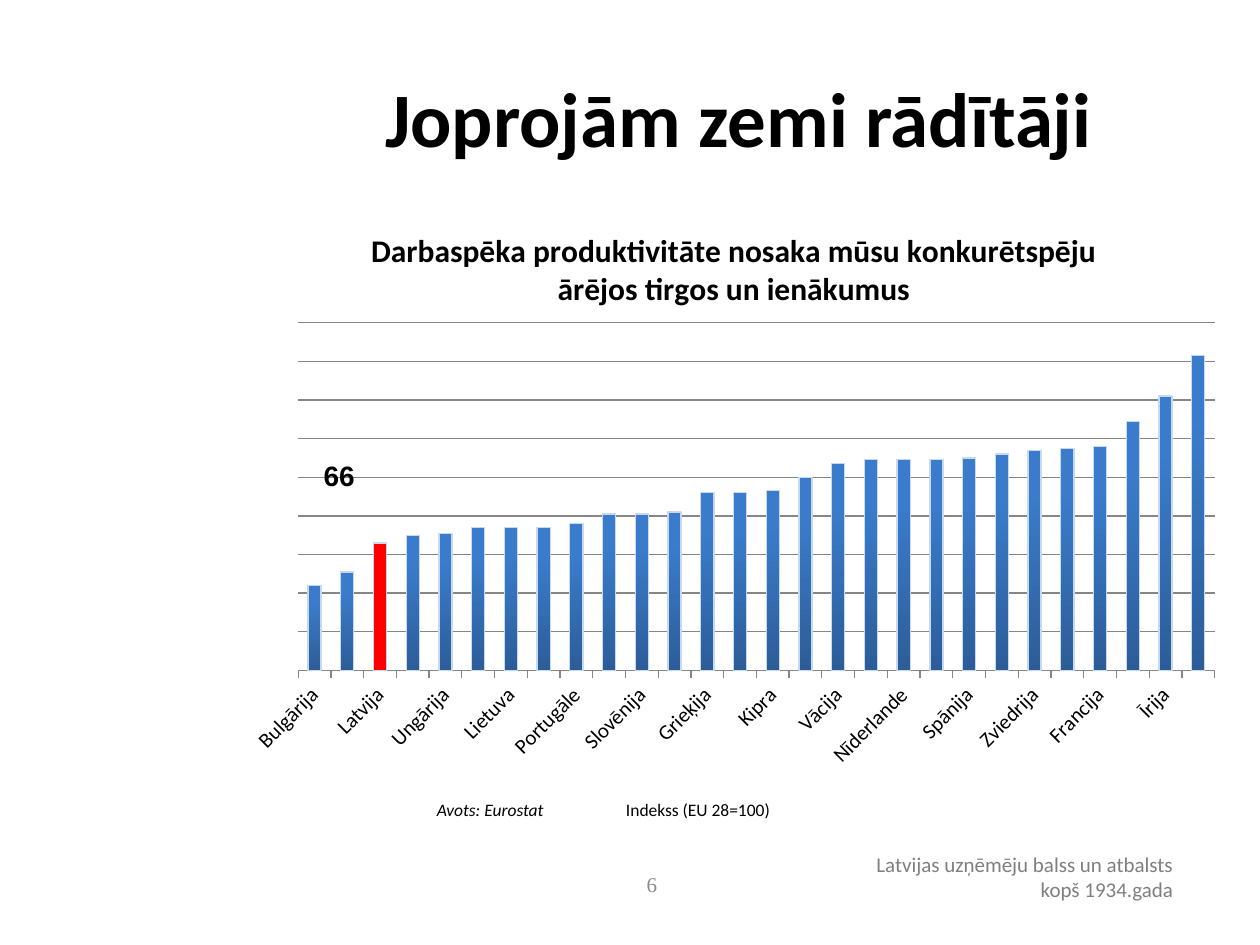
from dataclasses import dataclass

import pptx
import pptx.chart.data
import pptx.dml.color
import pptx.enum.chart
import pptx.enum.text
import pptx.oxml
import pptx.oxml.ns
import pptx.util
from pptx.util import Inches

ALIGN = pptx.enum.text.PP_ALIGN
ANCHOR = pptx.enum.text.MSO_ANCHOR


@dataclass(frozen=True)
class Theme:
    font: str = "Calibri"
    number_font: str = "Times New Roman"
    label_font: str = "Arial"
    ink: str = "000000"
    paper: str = "FFFFFF"
    footer: str = "7F7F7F"
    page_number: str = "898989"
    grid: str = "868686"
    bar_top: str = "3A7CCB"
    bar_bottom: str = "2C5D98"
    bar_edge: str = "C6D9F1"
    highlight: str = "FF0000"
    title_size: int = 44
    chart_title_size: int = 18
    label_size: int = 16
    small_size: int = 12
    source_size: int = 10


THEME = Theme()

PRODUCTIVITY = {
    "Bulgārija": 44, "Rumānija": 51, "Latvija": 66, "Igaunija": 70,
    "Ungārija": 71, "Čehija": 74, "Lietuva": 74, "Polija": 74,
    "Portugāle": 76, "Horvātija": 81, "Slovēnija": 81, "Slovākija": 82,
    "Grieķija": 92, "Malta": 92, "Kipra": 93, "Lielbritānija": 100,
    "Vācija": 107, "Itālija": 109, "Nīderlande": 109, "Somija": 109,
    "Spānija": 110, "Dānija": 112, "Zviedrija": 114, "Austrija": 115,
    "Francija": 116, "Beļģija": 129, "Īrija": 142, "Luksemburga": 163,
}


def rgb(value):
    return pptx.dml.color.RGBColor.from_string(value)


def format_font(font, size, color=THEME.ink, name=THEME.font, bold=False, italic=False):
    font.size = pptx.util.Pt(size)
    font.color.rgb = rgb(color)
    font.name, font.bold, font.italic = name, bold, italic


def add_text(slide, text, box, *, align=ALIGN.LEFT, anchor=ANCHOR.TOP,
             wrap=True, fill=None, **font_format):
    """Add a one-paragraph text box and return its paragraph."""
    text_box = slide.shapes.add_textbox(*map(Inches, box))
    if fill:
        text_box.fill.solid()
        text_box.fill.fore_color.rgb = rgb(fill)
    frame = text_box.text_frame
    frame.word_wrap, frame.vertical_anchor = wrap, anchor
    paragraph = frame.paragraphs[0]
    paragraph.alignment = align
    run = paragraph.add_run()
    run.text = text
    format_font(run.font, **font_format)
    return paragraph


def place_plot_area(chart, x, y, w, h):
    """Fix the inner plot area, in fractions of the chart."""
    plot_area = chart._chartSpace.chart.plotArea
    for layout in plot_area.findall(pptx.oxml.ns.qn("c:layout")):
        plot_area.remove(layout)
    sizes = "".join(f'<c:{tag} val="{value}"/>'
                    for tag, value in zip("xywh", (x, y, w, h)))
    plot_area.insert(0, pptx.oxml.parse_xml(
        f'<c:layout {pptx.oxml.ns.nsdecls("c")}><c:manualLayout>'
        '<c:layoutTarget val="inner"/><c:xMode val="edge"/><c:yMode val="edge"/>'
        f'{sizes}</c:manualLayout></c:layout>'))


def style_category_axis(axis):
    axis.major_tick_mark = pptx.enum.chart.XL_TICK_MARK.OUTSIDE
    axis.format.line.color.rgb = rgb(THEME.grid)
    format_font(axis.tick_labels.font, THEME.small_size)
    body = axis._element.find(".//" + pptx.oxml.ns.qn("a:bodyPr"))
    body.set("rot", "-2700000")
    body.set("vert", "horz")
    skip = pptx.oxml.parse_xml(
        f'<c:tickLblSkip {pptx.oxml.ns.nsdecls("c")} val="2"/>')
    axis._element.find(pptx.oxml.ns.qn("c:noMultiLvlLbl")).addprevious(skip)


def style_value_axis(axis):
    axis.minimum_scale, axis.maximum_scale, axis.major_unit = 0, 180, 20
    axis.has_major_gridlines = True
    axis.major_gridlines.format.line.color.rgb = rgb(THEME.grid)
    axis.visible = False


def style_edge(line):
    line.color.rgb = rgb(THEME.bar_edge)
    line.width = pptx.util.Pt(0.75)


def style_bars(series):
    series.invert_if_negative = False
    fill = series.format.fill
    fill.gradient()
    fill.gradient_angle = 270
    top, bottom = fill.gradient_stops
    top.color.rgb, top.position = rgb(THEME.bar_top), 0.2
    bottom.color.rgb, bottom.position = rgb(THEME.bar_bottom), 1
    style_edge(series.format.line)
    latvia = series.points[list(PRODUCTIVITY).index("Latvija")].format
    latvia.fill.solid()
    latvia.fill.fore_color.rgb = rgb(THEME.highlight)
    style_edge(latvia.line)


def add_productivity_chart(slide, title, box):
    data = pptx.chart.data.CategoryChartData()
    data.categories = list(PRODUCTIVITY)
    data.add_series("Series 1", list(PRODUCTIVITY.values()))
    chart = slide.shapes.add_chart(
        pptx.enum.chart.XL_CHART_TYPE.COLUMN_CLUSTERED,
        *map(Inches, box), data).chart
    format_font(chart.font, THEME.chart_title_size)
    chart.has_legend = False
    chart.has_title = True
    heading = chart.chart_title.text_frame.paragraphs[0].add_run()
    heading.text = title
    format_font(heading.font, THEME.chart_title_size, bold=True)
    plot = chart.plots[0]
    plot.gap_width, plot.vary_by_categories = 150, False
    style_bars(plot.series[0])
    style_category_axis(chart.category_axis)
    style_value_axis(chart.value_axis)
    place_plot_area(chart, 0.065, 0.206, 0.915, 0.604)


def main():
    deck = pptx.Presentation()
    deck.slide_width, deck.slide_height = Inches(10), Inches(7.5)
    slide = deck.slides.add_slide(deck.slide_layouts[6])

    add_text(slide, "Latvijas uzņēmēju balss un atbalsts kopš 1934.gada",
             (6.81, 6.71, 2.6, 0.51), align=ALIGN.RIGHT, fill=THEME.paper,
             size=THEME.small_size, color=THEME.footer)
    add_text(slide, "Joprojām zemi rādītāji", (2.4, 0.3, 6.93, 1.25),
             align=ALIGN.CENTER, anchor=ANCHOR.MIDDLE,
             size=THEME.title_size, bold=True)
    add_text(slide, "6", (4.01, 6.82, 2.33, 0.4),
             align=ALIGN.CENTER, anchor=ANCHOR.MIDDLE, size=THEME.small_size,
             color=THEME.page_number, name=THEME.number_font)
    add_productivity_chart(
        slide,
        "Darbaspēka produktivitāte nosaka mūsu konkurētspēju ārējos tirgos un ienākumus",
        (1.85, 1.62, 7.95, 4.57))
    add_text(slide, "66", (2.47, 3.59, 0.45, 0.37), wrap=False,
             size=THEME.label_size, name=THEME.label_font, bold=True)
    source = add_text(slide, "\tAvots: Eurostat\t\t", (2.87, 6.29, 5.66, 0.38),
                      size=THEME.source_size, italic=True)
    index_note = source.add_run()
    index_note.text = "Indekss (EU 28=100)"
    format_font(index_note.font, THEME.source_size)

    deck.save("out.pptx")


if __name__ == "__main__":
    main()
